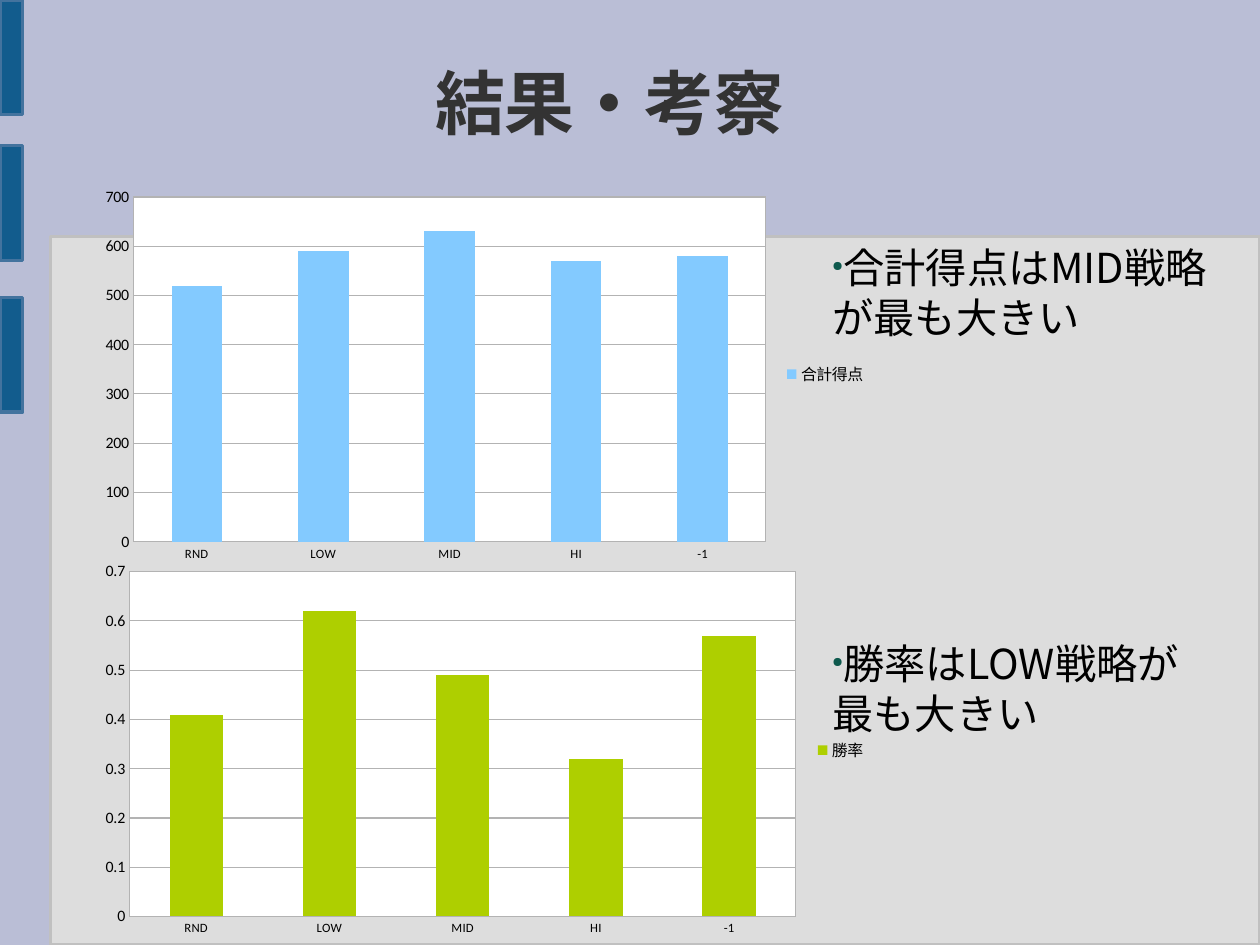
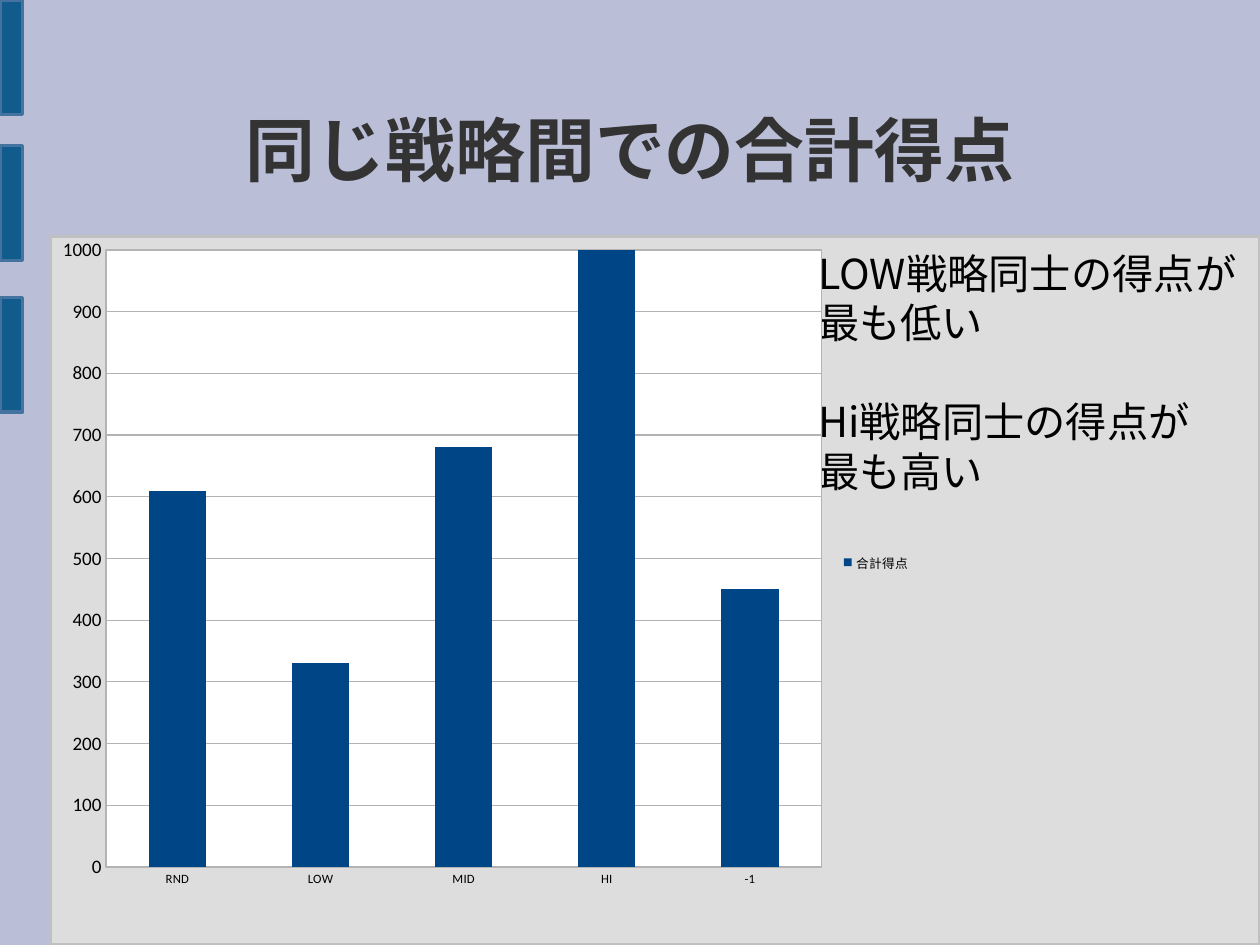
"""Build two slides of strategy results, with bar charts beside short remarks."""
import pptx
import pptx.chart.data
import pptx.dml.color
import pptx.enum.chart
import pptx.enum.lang
import pptx.enum.shapes
import pptx.enum.text
import pptx.oxml
import pptx.oxml.ns
import pptx.util

Pt = pptx.util.Pt
RGB = pptx.dml.color.RGBColor
qn = pptx.oxml.ns.qn

BACKGROUND = RGB(0xBA, 0xBE, 0xD6)
PANEL = RGB(0xDD, 0xDD, 0xDD)
PANEL_LINE = RGB(0xC0, 0xC0, 0xC0)
TAB = RGB(0x12, 0x5C, 0x8D)
TAB_LINE = RGB(0x43, 0x73, 0x9E)
TITLE = RGB(0x33, 0x33, 0x33)
BLACK = RGB(0, 0, 0)
GRID = RGB(0xB3, 0xB3, 0xB3)
SKY = RGB(0x83, 0xCA, 0xFF)
LIME = RGB(0xAE, 0xCF, 0x00)
NAVY = RGB(0x00, 0x45, 0x86)
BULLET = "0E594D"

TEXT_FONT, CHART_FONT = "Noto Sans CJK JP", "Calibri"
WIDTH, HEIGHT = 793.7, 595.28
LINE_PITCH = 31.2
PANEL_BOX = (31.7, 149, 762, 446.2)
TAB_TOPS = (0, 91.8, 187.2)
TAB_SIZE = (14.4, 72.4)
TITLE_SIZE = (677.5, 99.4)
STRATEGIES = ["RND", "LOW", "MID", "HI", "-1"]

SLIDES = [
    dict(
        title="結果・考察", title_at=(45.4, 14.4),
        body_box=(524.2, 152.6, 241.2, 386),
        body=[("合計得点はMID戦略が最も大きい", 0), ("勝率はLOW戦略が最も大きい", 6)],
        charts=[
            dict(box=(56.9, 113, 496, 245.5), plot=(0.055, 0.045, 0.803, 0.885),
                 name="合計得点", values=[520, 590, 630, 570, 580], color=SKY,
                 top=700, step=100, axis_size=10, legend_size=10),
            dict(box=(56.9, 349.8, 496, 245.5), plot=(0.05, 0.042, 0.846, 0.885),
                 name="勝率", values=[0.41, 0.62, 0.49, 0.32, 0.57], color=LIME,
                 top=0.7, step=0.1, axis_size=10, legend_size=10),
        ],
    ),
    dict(
        title="同じ戦略間での合計得点", title_at=(58.3, 43.9),
        body_box=(508.3, 156.2, 285.2, 393),
        body=[("LOW戦略同士の得点が", 0), ("最も低い", 0),
              ("Hi戦略同士の得点が", 1), ("最も高い", 0)],
        charts=[
            dict(box=(28.1, 141.8, 553, 424.8), plot=(0.07, 0.037, 0.815, 0.915),
                 name="合計得点", values=[610, 330, 680, 1020, 450], color=NAVY,
                 top=1000, step=100, axis_size=12, legend_size=8),
        ],
    ),
]


def points(box):
    return [Pt(v) for v in box]


def add_box(s, box, fill, line):
    sp = s.shapes.add_shape(pptx.enum.shapes.MSO_SHAPE.RECTANGLE, *points(box))
    sp.shadow.inherit = False
    sp.fill.solid()
    sp.fill.fore_color.rgb = fill
    sp.line.color.rgb = line
    sp.line.width = Pt(2)


def add_bullet(p):
    ppr = p._p.get_or_add_pPr()
    ppr.set("marL", "0")
    ppr.set("indent", "0")
    color = ppr.makeelement(qn("a:buClr"), {})
    color.append(color.makeelement(qn("a:srgbClr"), {"val": BULLET}))
    ppr.append(color)
    ppr.append(ppr.makeelement(qn("a:buSzPct"), {"val": "34000"}))
    ppr.append(ppr.makeelement(qn("a:buChar"), {"char": "●"}))


def add_text(s, box, lines, size=26, color=BLACK, bold=False, align="LEFT",
             anchor="TOP", pitch=None, bullet=False):
    tf = s.shapes.add_textbox(*points(box)).text_frame
    tf.word_wrap = True
    tf.margin_left = tf.margin_right = tf.margin_top = tf.margin_bottom = 0
    tf.vertical_anchor = pptx.enum.text.MSO_ANCHOR[anchor]
    for i, (text, gap_lines) in enumerate(lines):
        p = tf.add_paragraph() if i else tf.paragraphs[0]
        p.alignment = pptx.enum.text.PP_ALIGN[align]
        if pitch:
            p.line_spacing = Pt(pitch)
            p.space_before = Pt(gap_lines * pitch)
        if bullet:
            add_bullet(p)
        r = p.add_run()
        r.text = text
        font = r.font
        font.size, font.bold, font.name = Pt(size), bold, TEXT_FONT
        font.color.rgb = color
        font.language_id = pptx.enum.lang.MSO_LANGUAGE_ID.JAPANESE
        font._rPr.append(font._rPr.makeelement(qn("a:ea"), {"typeface": TEXT_FONT}))


def format_plot_area(chart, plot):
    area = chart._chartSpace.chart.plotArea
    for old in area.findall(qn("c:layout")):
        area.remove(old)
    x, y, w, h = plot
    ns = pptx.oxml.ns.nsdecls("c", "a")
    area.insert(0, pptx.oxml.parse_xml(
        f'<c:layout {ns}><c:manualLayout><c:layoutTarget val="inner"/>'
        '<c:xMode val="edge"/><c:yMode val="edge"/>'
        f'<c:x val="{x}"/><c:y val="{y}"/><c:w val="{w}"/><c:h val="{h}"/>'
        '</c:manualLayout></c:layout>'))
    area.append(pptx.oxml.parse_xml(
        f'<c:spPr {ns}><a:solidFill><a:srgbClr val="FFFFFF"/></a:solidFill>'
        f'<a:ln w="{Pt(0.75)}"><a:solidFill><a:srgbClr val="{GRID}"/></a:solidFill></a:ln>'
        '</c:spPr>'))


def style_line(line):
    line.color.rgb = GRID
    line.width = Pt(0.75)


def add_bars(s, box, plot, name, values, color, top, step, axis_size, legend_size):
    data = pptx.chart.data.CategoryChartData()
    data.categories = STRATEGIES
    data.add_series(name, values)
    kind = pptx.enum.chart.XL_CHART_TYPE.COLUMN_CLUSTERED
    chart = s.shapes.add_chart(kind, *points(box), data).chart
    chart.has_title = False
    chart.font.name, chart.font.size = CHART_FONT, Pt(10)
    chart.font.color.rgb = BLACK
    chart.has_legend = True
    chart.legend.position = pptx.enum.chart.XL_LEGEND_POSITION.RIGHT
    chart.legend.include_in_layout = False
    chart.legend.font.size = Pt(legend_size)
    bars = chart.plots[0]
    bars.gap_width, bars.vary_by_categories = 150, False
    fill = bars.series[0].format.fill
    fill.solid()
    fill.fore_color.rgb = color
    value_axis = chart.value_axis
    for axis, size in ((chart.category_axis, 8), (value_axis, axis_size)):
        axis.major_tick_mark = pptx.enum.chart.XL_TICK_MARK.NONE
        axis.minor_tick_mark = pptx.enum.chart.XL_TICK_MARK.NONE
        axis.tick_labels.font.size = Pt(size)
        style_line(axis.format.line)
    value_axis.tick_labels.number_format = "General"
    value_axis.tick_labels.number_format_is_linked = False
    value_axis.minimum_scale, value_axis.maximum_scale = 0, top
    value_axis.major_unit = step
    style_line(value_axis.major_gridlines.format.line)
    format_plot_area(chart, plot)


def add_slide(prs, content):
    s = prs.slides.add_slide(prs.slide_layouts[6])
    add_box(s, PANEL_BOX, PANEL, PANEL_LINE)
    for top in TAB_TOPS:
        add_box(s, (0, top, *TAB_SIZE), TAB, TAB_LINE)
    add_text(s, (*content["title_at"], *TITLE_SIZE), [(content["title"], 0)],
             size=44, color=TITLE, bold=True, align="CENTER", anchor="MIDDLE")
    add_text(s, content["body_box"], content["body"], pitch=LINE_PITCH, bullet=True)
    for chart in content["charts"]:
        add_bars(s, **chart)


def main():
    prs = pptx.Presentation()
    prs.slide_width, prs.slide_height = Pt(WIDTH), Pt(HEIGHT)
    fill = prs.slide_master.background.fill
    fill.solid()
    fill.fore_color.rgb = BACKGROUND
    for content in SLIDES:
        add_slide(prs, content)
    prs.save("out.pptx")


if __name__ == "__main__":
    main()
